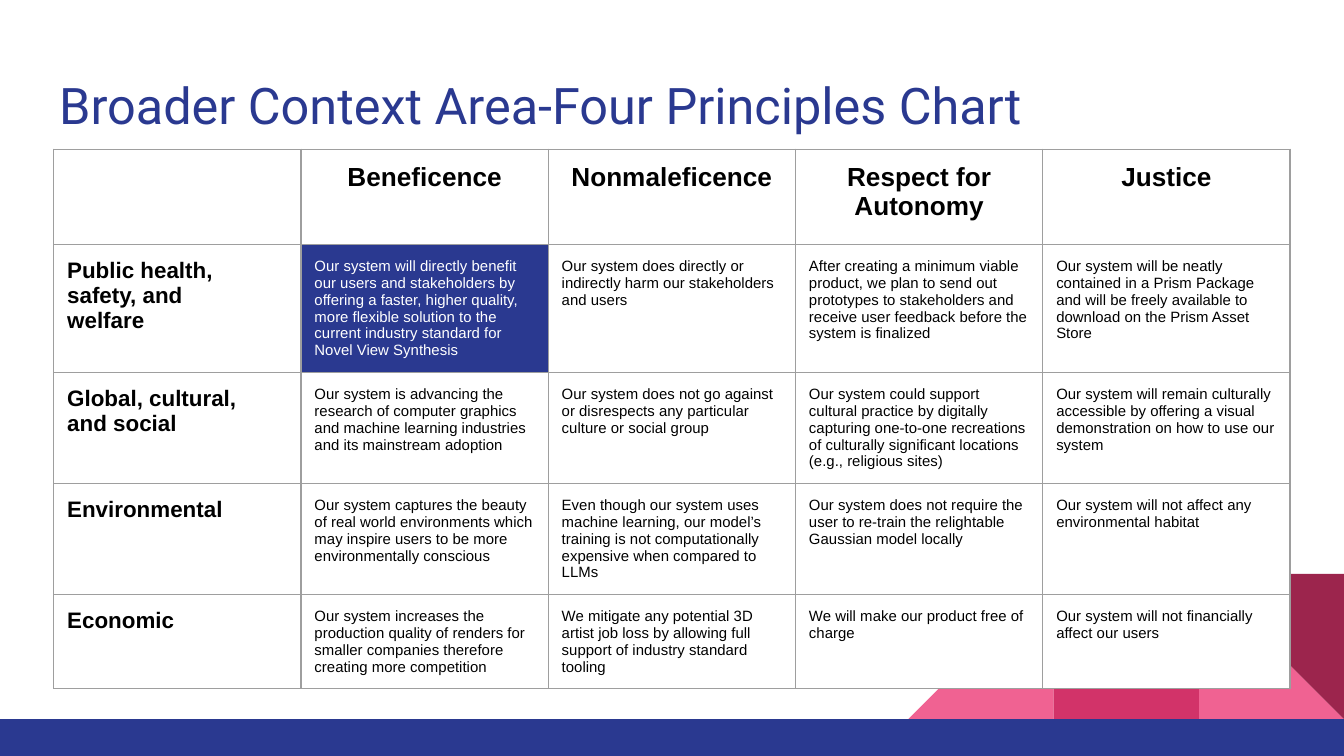
from lxml import etree
from pptx import Presentation
from pptx.dml.color import RGBColor
from pptx.enum import shapes, text
from pptx.oxml.ns import qn
from pptx.util import Inches, Pt

NAVY, PINK, ROSE, WINE = "2A3990", "F06292", "D23369", "9C254D"
WHITE, BLACK, GREY = "FFFFFF", "000000", "9E9E9E"
HEADER = {"size": Pt(14), "bold": True}
ROW_LABEL = {"size": Pt(12), "bold": True}
BODY = {"size": Pt(8), "bold": False}

PRINCIPLES = [
    ["", "Beneficence", "Nonmaleficence", "Respect for\nAutonomy", "Justice"],
    ["Public health,\nsafety, and\nwelfare",
     "Our system will directly benefit our users and stakeholders by offering a faster, "
     "higher quality, more flexible solution to the current industry standard for Novel "
     "View Synthesis",
     "Our system does directly or indirectly harm our stakeholders and users",
     "After creating a minimum viable product, we plan to send out prototypes to "
     "stakeholders and receive user feedback before the system is finalized",
     "Our system will be neatly contained in a Prism Package and will be freely available "
     "to download on the Prism Asset Store"],
    ["Global, cultural,\nand social",
     "Our system is advancing the research of computer graphics and machine learning "
     "industries and its mainstream adoption",
     "Our system does not go against or disrespects any particular culture or social group",
     "Our system could support cultural practice by digitally capturing one-to-one "
     "recreations of culturally significant locations (e.g., religious sites)",
     "Our system will remain culturally accessible by offering a visual demonstration on "
     "how to use our system"],
    ["Environmental",
     "Our system captures the beauty of real world environments which may inspire users to "
     "be more environmentally conscious",
     "Even though our system uses machine learning, our model’s training is not "
     "computationally expensive when compared to LLMs",
     "Our system does not require the user to re-train the relightable Gaussian model locally",
     "Our system will not affect any environmental habitat"],
    ["Economic",
     "Our system increases the production quality of renders for smaller companies "
     "therefore creating more competition",
     "We mitigate any potential 3D artist job loss by allowing full support of industry "
     "standard tooling",
     "We will make our product free of charge",
     "Our system will not financially affect our users"],
]
ROW_HEIGHTS = [0.71, 0.85, 0.64, 0.57, 0.57]
COLUMN_WIDTH = 1.84
HIGHLIGHT = (1, 1)


def rgb(hex_code):
    return RGBColor.from_string(hex_code)


class SlideBuilder:
    """Holds the slide and its shared style."""

    margin = Inches(0.1)

    def __init__(self, slide):
        self.slide = slide

    def format_text(self, tf, color, align, **font):
        tf.word_wrap = True
        for p in tf.paragraphs:
            p.alignment = align
            for r in p.runs:
                r.font.color.rgb = rgb(color)
                for name, value in font.items():
                    setattr(r.font, name, value)

    def shape(self, kind, x, y, w, h, color, rotation=0, flip=False):
        sp = self.slide.shapes.add_shape(kind, Inches(x), Inches(y), Inches(w), Inches(h))
        sp.shadow.inherit = False
        sp.fill.solid()
        sp.fill.fore_color.rgb = rgb(color)
        sp.line.fill.background()
        sp.rotation = rotation
        if flip:
            sp._element.spPr.find(qn("a:xfrm")).set("flipH", "1")

    def title(self, content, x, y, w, h):
        sp = self.slide.shapes.title
        sp.left, sp.top, sp.width, sp.height = map(Inches, (x, y, w, h))
        tf = sp.text_frame
        tf.text = content
        layout = {"auto_size": text.MSO_AUTO_SIZE.NONE,
                  "vertical_anchor": text.MSO_ANCHOR.TOP}
        layout.update({f"margin_{side}": self.margin
                       for side in ("left", "right", "top", "bottom")})
        for name, value in layout.items():
            setattr(tf, name, value)
        self.format_text(tf, NAVY, text.PP_ALIGN.LEFT, name="Roboto", size=Pt(27), bold=False)

    def borders(self, cell):
        tc_pr = cell._tc.get_or_add_tcPr()
        for i, side in enumerate(("lnL", "lnR", "lnT", "lnB")):
            ln = etree.Element(qn(f"a:{side}"), w=str(Pt(0.75)))
            fill = etree.SubElement(ln, qn("a:solidFill"))
            etree.SubElement(fill, qn("a:srgbClr"), val=GREY)
            tc_pr.insert(i, ln)

    def cell(self, cell, content, row, col):
        cell.text = content
        for side in ("left", "right", "top", "bottom"):
            setattr(cell, f"margin_{side}", self.margin)
        highlighted = (row, col) == HIGHLIGHT
        cell.fill.solid()
        cell.fill.fore_color.rgb = rgb(NAVY if highlighted else WHITE)
        style = HEADER if row == 0 else ROW_LABEL if col == 0 else BODY
        align = text.PP_ALIGN.CENTER if row == 0 else text.PP_ALIGN.LEFT
        self.format_text(cell.text_frame, WHITE if highlighted else BLACK, align,
                         name="Arial", **style)
        self.borders(cell)

    def table(self, rows, x, y, col_width, row_heights):
        n_cols = len(rows[0])
        table = self.slide.shapes.add_table(
            len(rows), n_cols, Inches(x), Inches(y),
            Inches(col_width * n_cols), Inches(sum(row_heights))).table
        table.first_row = table.horz_banding = False
        for column in table.columns:
            column.width = Inches(col_width)
        for i, (contents, height) in enumerate(zip(rows, row_heights)):
            table.rows[i].height = Inches(height)
            for j, content in enumerate(contents):
                self.cell(table.cell(i, j), content, i, j)


def main():
    prs = Presentation()
    prs.slide_width, prs.slide_height = Inches(10), Inches(10 * 9 / 16)
    s = SlideBuilder(prs.slides.add_slide(prs.slide_layouts[5]))

    triangle = shapes.MSO_SHAPE.RIGHT_TRIANGLE
    rectangle = shapes.MSO_SHAPE.RECTANGLE
    side, top = 1.08, 4.27
    left, middle, right = (10 - n * side for n in (3, 2, 1))
    s.shape(triangle, right, top, side, side, PINK)
    s.shape(triangle, left, top, side, side, PINK, flip=True)
    s.shape(rectangle, middle, top, side, side, ROSE)
    s.shape(triangle, right, top, side, side, WINE, rotation=180)
    s.shape(rectangle, 0, top + side, 10, 0.28, NAVY)

    s.title("Broader Context Area-Four Principles Chart", 0.34, 0.45, 9.32, 0.66)
    s.table(PRINCIPLES, 0.4, 1.11, COLUMN_WIDTH, ROW_HEIGHTS)
    prs.save("out.pptx")


if __name__ == "__main__":
    main()
